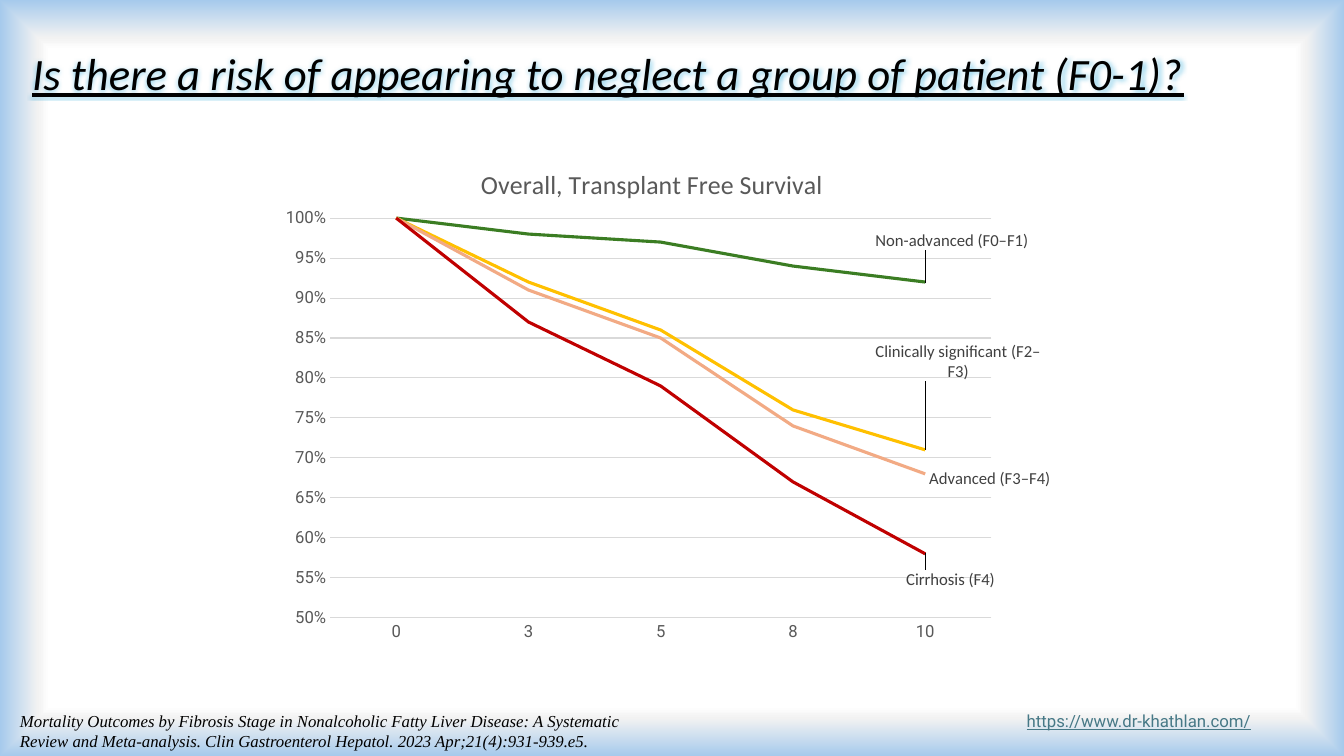
import pptx
import pptx.chart.data
import pptx.dml.color
import pptx.enum.chart
import pptx.enum.text
import pptx.oxml
import pptx.util
from pptx.util import Inches

DRAW = 'xmlns:a="http://schemas.openxmlformats.org/drawingml/2006/main"'
CHART = 'xmlns:c="http://schemas.openxmlformats.org/drawingml/2006/chart"'
YEARS = ["0", "3", "5", "8", "10"]
# Name, survival, colour, label shift as a share of the chart size
STAGES = [
    ("Non-advanced (F0–F1)", (1, 0.98, 0.97, 0.94, 0.92), "3B7D23", (-0.07, -0.08)),
    ("Clinically significant (F2–F3)", (1, 0.92, 0.86, 0.76, 0.71), "FFC000", (-0.07, -0.17)),
    ("Advanced (F3–F4)", (1, 0.91, 0.85, 0.74, 0.68), "F2AA84", (0, 0.01)),
    ("Cirrhosis (F4)", (1, 0.87, 0.79, 0.67, 0.58), "C00000", (-0.03, 0.05)),
]


def color(text):
    return pptx.dml.color.RGBColor.from_string(text)


def set_font(font, name, size, tint):
    font.name = name
    font.size = pptx.util.Pt(size)
    font.color.rgb = color(tint)
    font.bold = False


def set_line(line, tint, width):
    line.color.rgb = color(tint)
    line.width = pptx.util.Pt(width)


def set_back(slide):
    """Fill the slide with white that turns blue at its edges."""
    stops = [(0, "FFFFFF"), (87, "FFFFFF"), (90, "F2F2F2"), (100, "A6CAEC")]
    marks = "".join(f'<a:gs pos="{spot * 1000}"><a:srgbClr val="{tint}"/></a:gs>'
                    for spot, tint in stops)
    fill = slide.background.fill
    fill.solid()
    fill.fore_color.rgb = color("FFFFFF")
    solid = slide._element.cSld.bg.bgPr[0]
    grad = pptx.oxml.parse_xml(
        f'<a:gradFill {DRAW} rotWithShape="1"><a:gsLst>{marks}</a:gsLst>'
        '<a:path path="shape"><a:fillToRect l="50000" t="50000" r="50000" b="50000"/>'
        '</a:path></a:gradFill>')
    solid.getparent().replace(solid, grad)


def add_text(slide, place, text, name, size, tint="000000"):
    box = slide.shapes.add_textbox(*map(Inches, place))
    frame = box.text_frame
    frame.word_wrap = True
    frame.text = text
    run = frame.paragraphs[0].runs[0]
    set_font(run.font, name, size, tint)
    return frame, run


def add_title(slide):
    frame, run = add_text(slide, (0.22, 0.03, 11.84, 1.45),
                          "Is there a risk of appearing to neglect a group of patient (F0-1)?",
                          "Calibri", 32)
    frame.vertical_anchor = pptx.enum.text.MSO_ANCHOR.MIDDLE
    frame.paragraphs[0].line_spacing = 0.9
    run.font.italic = run.font.underline = True
    glow = pptx.oxml.parse_xml(
        f'<a:effectLst {DRAW}><a:glow rad="63500"><a:srgbClr val="0F9ED5">'
        '<a:alpha val="40000"/></a:srgbClr></a:glow></a:effectLst>')
    run._r.rPr[0].addnext(glow)


def layout(left, top, size=None):
    """Return a manual layout; with a size it sets the inner plot."""
    target = '<c:layoutTarget val="inner"/>' if size else ""
    modes = '<c:xMode val="edge"/><c:yMode val="edge"/>'
    span = f'<c:w val="{size[0]}"/><c:h val="{size[1]}"/>' if size else ""
    return pptx.oxml.parse_xml(
        f'<c:layout {CHART}><c:manualLayout>{target}{modes}'
        f'<c:x val="{left}"/><c:y val="{top}"/>{span}</c:manualLayout></c:layout>')


def put_layout(parent, item, after):
    for old in parent.findall(item.tag):
        parent.remove(old)
    if after is None:
        parent.insert(0, item)
    else:
        after.addnext(item)


def add_label(series, shift):
    """Name the line at its last point, with a leader line."""
    def show(name):
        flags = ["LegendKey", "Val", "CatName", "SerName", "Percent", "BubbleSize"]
        return "".join(f'<c:show{flag} val="{int(flag == name)}"/>' for flag in flags)

    labels = pptx.oxml.parse_xml(
        f'<c:dLbls {CHART} {DRAW}><c:dLbl><c:idx val="{len(YEARS) - 1}"/>'
        f'<c:layout><c:manualLayout><c:x val="{shift[0]}"/><c:y val="{shift[1]}"/>'
        '</c:manualLayout></c:layout><c:spPr><a:noFill/><a:ln><a:noFill/></a:ln></c:spPr>'
        '<c:txPr><a:bodyPr/><a:p><a:pPr><a:defRPr sz="1200" b="0"><a:solidFill>'
        '<a:srgbClr val="404040"/></a:solidFill><a:latin typeface="Calibri"/></a:defRPr>'
        '</a:pPr><a:endParaRPr lang="en-US"/></a:p></c:txPr><c:dLblPos val="r"/>'
        f'{show("SerName")}</c:dLbl>{show(None)}'
        '<c:extLst><c:ext uri="{CE6537A1-D6FC-4f65-9D91-7224C49458BB}" '
        'xmlns:c15="http://schemas.microsoft.com/office/drawing/2012/chart">'
        '<c15:showLeaderLines val="1"/></c:ext></c:extLst></c:dLbls>')
    series._element.find(pptx.oxml.ns.qn("c:cat")).addprevious(labels)


def style_axes(chart):
    none = pptx.enum.chart.XL_TICK_MARK.NONE
    years, rates = chart.category_axis, chart.value_axis
    for axis in (years, rates):
        axis.major_tick_mark = axis.minor_tick_mark = none
        set_font(axis.tick_labels.font, "Roboto", 12, "595959")
    set_line(years.format.line, "D9D9D9", 0.75)
    rates.minimum_scale, rates.maximum_scale, rates.major_unit = 0.5, 1, 0.05
    rates.tick_labels.number_format = "0%"
    rates.tick_labels.number_format_is_linked = False
    rates.format.line.fill.background()
    set_line(rates.major_gridlines.format.line, "D9D9D9", 0.75)


def add_graph(slide):
    data = pptx.chart.data.CategoryChartData(number_format="0%")
    data.categories = YEARS
    for name, rates, _, _ in STAGES:
        data.add_series(name, rates)
    place = map(Inches, (2.74, 1.34, 7.68, 5.15))
    chart = slide.shapes.add_chart(pptx.enum.chart.XL_CHART_TYPE.LINE, *place, data).chart
    chart.has_legend = False
    set_font(chart.font, "Roboto", 10, "000000")
    style_axes(chart)

    chart.has_title = True
    title = chart.chart_title
    title.include_in_layout = False
    title.text_frame.text = "Overall, Transplant Free Survival"
    set_font(title.text_frame.paragraphs[0].runs[0].font, "Calibri", 18.6, "595959")
    head = title._element
    put_layout(head, layout(0.26, 0.05), head.find(pptx.oxml.ns.qn("c:tx")))
    area = chart._chartSpace.chart.plotArea
    put_layout(area, layout(0.07, 0.16, (0.86, 0.77)), None)

    plot = chart.plots[0]
    plot.vary_by_categories = False
    for series, (_, _, tint, shift) in zip(plot.series, STAGES):
        series.smooth = False
        series.marker.style = pptx.enum.chart.XL_MARKER_STYLE.NONE
        set_line(series.format.line, tint, 2.25)
        add_label(series, shift)


def main():
    deck = pptx.Presentation()
    deck.slide_width, deck.slide_height = Inches(13.33), Inches(7.5)
    slide = deck.slides.add_slide(deck.slide_layouts[6])
    set_back(slide)
    frame, run = add_text(slide, (9.49, 7, 3.61, 0.3), "https://www.dr-khathlan.com/",
                          "Roboto", 12, "467886")
    frame.paragraphs[0].alignment = pptx.enum.text.PP_ALIGN.CENTER
    run.font.underline = True
    add_title(slide)
    add_graph(slide)
    _, run = add_text(
        slide, (0.1, 7, 6.67, 0.5),
        "Mortality Outcomes by Fibrosis Stage in Nonalcoholic Fatty Liver Disease: "
        "A Systematic Review and Meta-analysis. Clin Gastroenterol Hepatol. "
        "2023 Apr;21(4):931-939.e5.", "Times New Roman", 12)
    run.font.italic = True
    deck.save("out.pptx")


if __name__ == "__main__":
    main()
